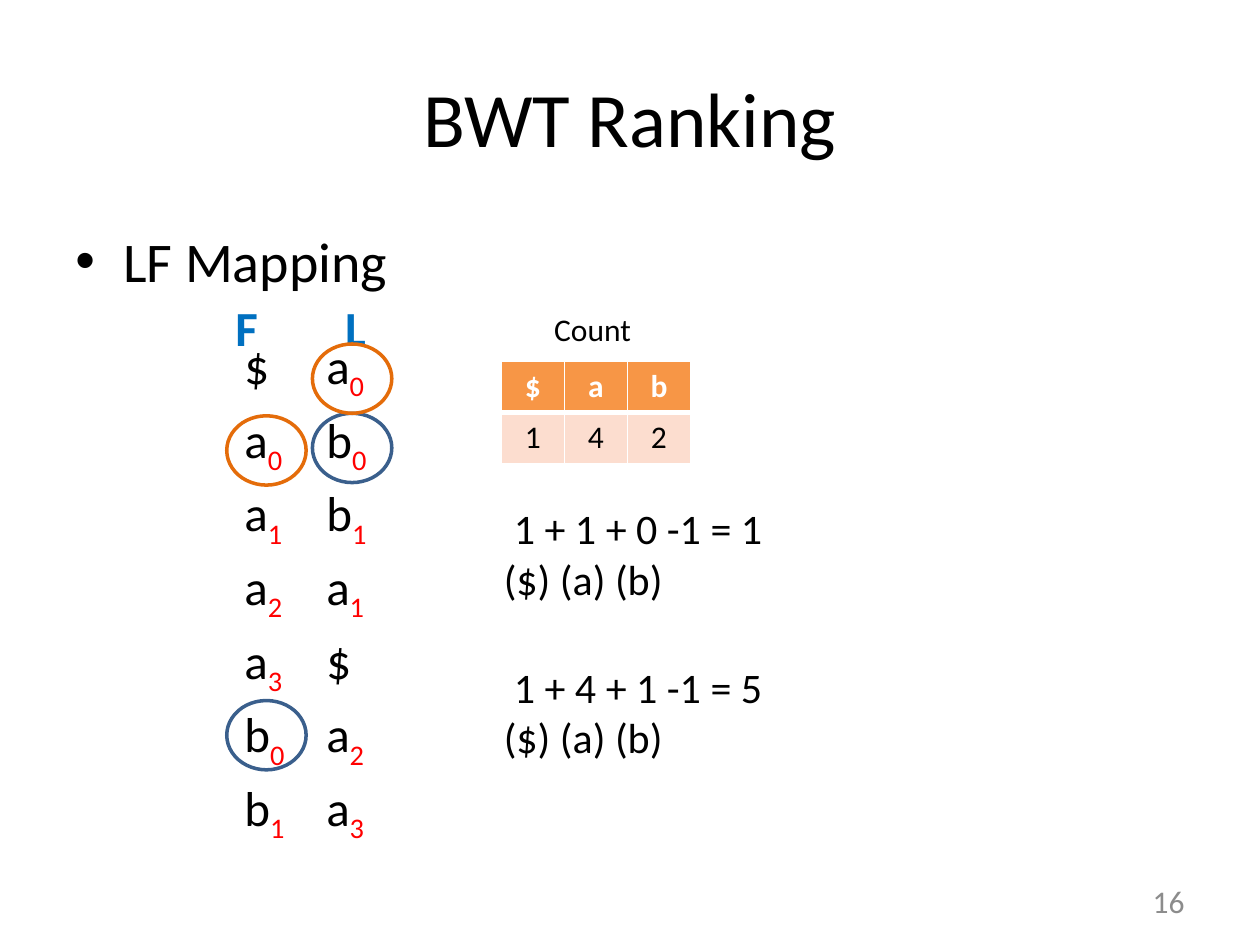
import pptx
import pptx.util
import pptx.dml.color
import pptx.enum.shapes
import pptx.enum.text
import pptx.oxml.ns
from lxml import etree

Inches, Pt = pptx.util.Inches, pptx.util.Pt
RGBColor = pptx.dml.color.RGBColor
ALIGN = pptx.enum.text.PP_ALIGN
MIDDLE = pptx.enum.text.MSO_ANCHOR.MIDDLE
qn = pptx.oxml.ns.qn

BLACK = RGBColor(0x00, 0x00, 0x00)
WHITE = RGBColor(0xFF, 0xFF, 0xFF)
GRAY = RGBColor(0x8C, 0x8C, 0x8C)
RED = RGBColor(0xFF, 0x00, 0x00)
HEADING_BLUE = RGBColor(0x00, 0x70, 0xC0)
RING_BLUE = RGBColor(0x3A, 0x5F, 0x8C)
RING_ORANGE = RGBColor(0xE4, 0x6C, 0x0A)
HEADER_FILL = RGBColor(0xF7, 0x96, 0x46)
VALUE_FILL = RGBColor(0xFC, 0xDD, 0xCF)

# First and last column of the sorted rotations
RANKS = [("$", "a0"), ("a0", "b0"), ("a1", "b1"), ("a2", "a1"),
         ("a3", "$"), ("b0", "a2"), ("b1", "a3")]
COUNTS = [("$", "a", "b"), ("1", "4", "2")]
SUMS = [(3.94, "1 + 1 + 0 -1 = 1"), (5.2, "1 + 4 + 1 -1 = 5")]
RING_COLS = {"F": 1.8, "L": 2.48}
RINGS = [("L", 3.28, RING_BLUE), ("F", 5.56, RING_BLUE),
         ("F", 3.3, RING_ORANGE), ("L", 2.73, RING_ORANGE)]


def add_run(p, text, size=18, color=BLACK, bold=False, subscript=False):
    r = p.add_run()
    r.text = text
    r.font.name = "Calibri"
    r.font.size = Pt(size)
    r.font.bold = bold
    r.font.color.rgb = color
    if subscript:
        r._r.get_or_add_rPr().set("baseline", "-25000")


def add_text(s, box, *lines, align=ALIGN.LEFT, anchor=None, wrap=True, **font):
    tf = s.shapes.add_textbox(*map(Inches, box)).text_frame
    tf.word_wrap = wrap
    tf.vertical_anchor = anchor
    for i, line in enumerate(lines):
        p = tf.paragraphs[0] if i == 0 else tf.add_paragraph()
        p.alignment = align
        add_run(p, line, **font)
    return tf


def set_indent(p, left, first=0):
    pPr = p._p.get_or_add_pPr()
    pPr.set("marL", str(Inches(left)))
    pPr.set("indent", str(Inches(first)))
    return pPr


def add_title(s, text):
    title = s.shapes.title
    title.left, title.top, title.width, title.height = map(Inches, (0.5, 0.3, 9, 1.25))
    title.text_frame.vertical_anchor = MIDDLE
    p = title.text_frame.paragraphs[0]
    p.alignment = ALIGN.CENTER
    add_run(p, text, size=44)


def add_bullet(s, box, text):
    p = add_text(s, box, text, size=32).paragraphs[0]
    p.space_before = Pt(6.4)
    pPr = set_indent(p, 0.38, -0.38)
    etree.SubElement(pPr, qn("a:buFont")).set("typeface", "Arial")
    etree.SubElement(pPr, qn("a:buChar")).set("char", "•")


def add_grid(s, box, rows, cols):
    table = s.shapes.add_table(rows, cols, *map(Inches, box)).table
    table.first_row = table.horz_banding = False
    return table


def set_borders(cell, bottom=1):
    tcPr = cell._tc.get_or_add_tcPr()
    for side, width in (("L", 1), ("R", 1), ("T", 1), ("B", bottom)):
        ln = etree.SubElement(tcPr, qn(f"a:ln{side}"), w=str(Pt(width)))
        fill = etree.SubElement(ln, qn("a:solidFill"))
        etree.SubElement(fill, qn("a:srgbClr")).set("val", str(WHITE))


def add_symbol(p, symbol):
    """Write a letter with its rank as a red subscript."""
    add_run(p, symbol[0], size=28)
    if symbol[1:]:
        add_run(p, symbol[1:], size=28, color=RED, subscript=True)


def add_rank_table(s):
    table = add_grid(s, (1.93, 2.65, 1.5, 4.09), len(RANKS), 1)
    for row, (first, last) in enumerate(RANKS):
        cell = table.cell(row, 0)
        cell.margin_left = cell.margin_right = cell.margin_top = Inches(0.01)
        cell.margin_bottom = 0
        cell.vertical_anchor = MIDDLE
        set_borders(cell)
        cell.fill.background()
        p = cell.text_frame.paragraphs[0]
        tabs = etree.SubElement(p._p.get_or_add_pPr(), qn("a:tabLst"))
        etree.SubElement(tabs, qn("a:tab"), pos=str(Inches(0.65)), algn="l")
        add_symbol(p, first)
        add_run(p, "\t", size=28)
        add_symbol(p, last)


def add_count_table(s):
    table = add_grid(s, (3.98, 2.87, 1.5, 0.81), len(COUNTS), len(COUNTS[0]))
    for row, values in enumerate(COUNTS):
        header = row == 0
        for col, value in enumerate(values):
            cell = table.cell(row, col)
            set_borders(cell, bottom=3 if header else 1)
            cell.fill.solid()
            cell.fill.fore_color.rgb = HEADER_FILL if header else VALUE_FILL
            p = cell.text_frame.paragraphs[0]
            p.alignment = ALIGN.CENTER
            add_run(p, value, color=WHITE if header else BLACK, bold=header)


def add_ring(s, left, top, color):
    sp = s.shapes.add_shape(pptx.enum.shapes.MSO_SHAPE.OVAL,
                            *map(Inches, (left, top, 0.63, 0.55)))
    sp.shadow.inherit = False
    sp.fill.background()
    sp.line.color.rgb = color
    sp.line.width = Pt(2)


def main():
    prs = pptx.Presentation()
    prs.slide_width, prs.slide_height = Inches(10), Inches(7.5)
    s = prs.slides.add_slide(prs.slide_layouts[5])

    add_title(s, "BWT Ranking")
    add_text(s, (7.17, 6.95, 2.33, 0.4), "16", align=ALIGN.RIGHT, anchor=MIDDLE, color=GRAY)
    add_rank_table(s)
    add_count_table(s)
    add_bullet(s, (0.5, 1.75, 9, 4.95), "LF Mapping")
    add_text(s, (4.3, 2.41, 1.1, 0.4), "Count")
    for left, width, text in ((1.77, 0.35, "F"), (2.64, 0.47, "L")):
        add_text(s, (left, 2.31, width, 0.57), text, size=28, color=HEADING_BLUE, bold=True)
    for top, total in SUMS:
        tf = add_text(s, (3.9, top, 2.26, 0.91), total, "($) (a) (b)", size=24, wrap=False)
        set_indent(tf.paragraphs[0], 0.08)
    for column, top, color in RINGS:
        add_ring(s, RING_COLS[column], top, color)

    prs.save("out.pptx")


if __name__ == "__main__":
    main()
